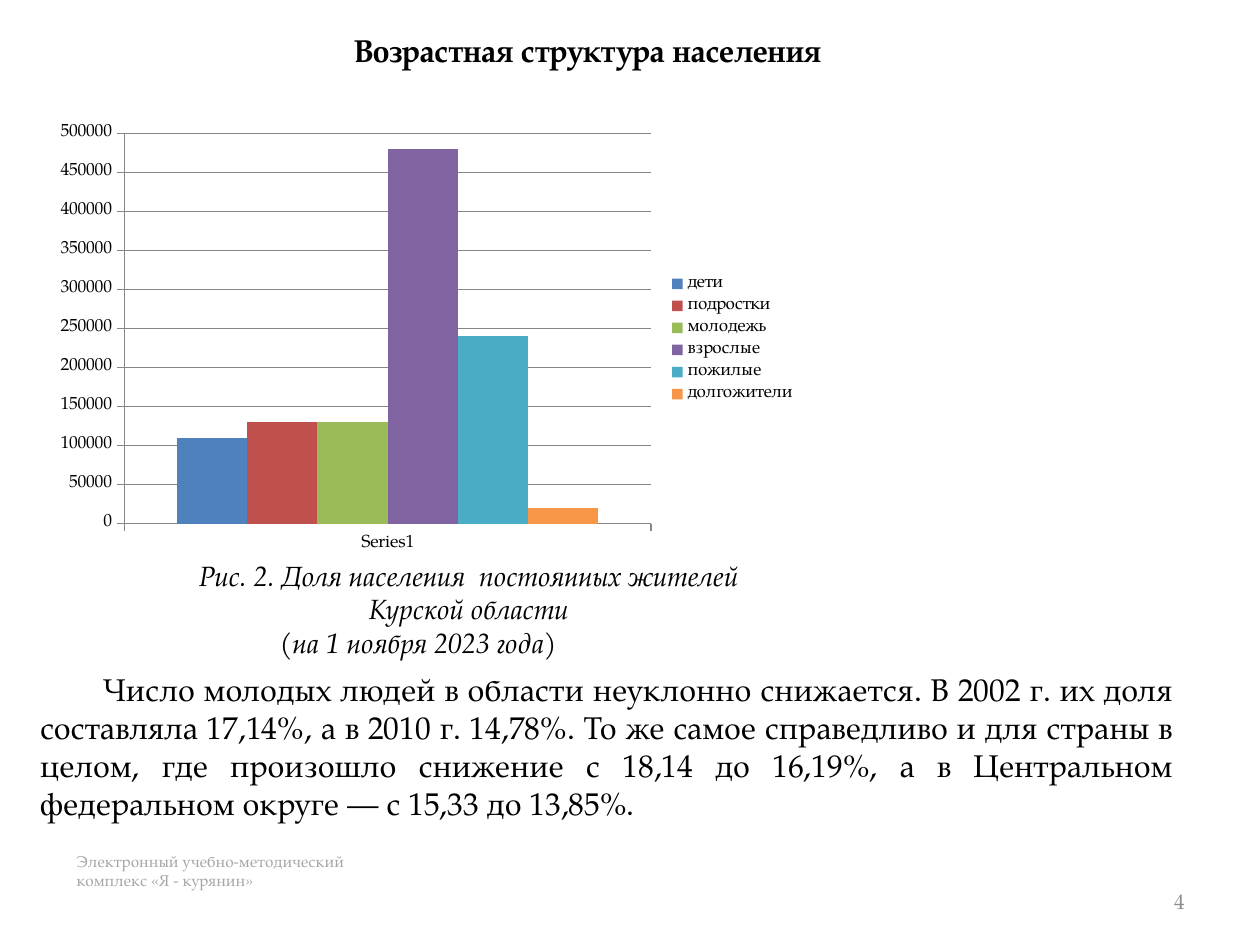
from lxml.etree import SubElement
from pptx import Presentation
from pptx.chart.data import CategoryChartData
from pptx.dml.color import RGBColor
from pptx.enum.chart import XL_CHART_TYPE, XL_LEGEND_POSITION, XL_TICK_MARK
from pptx.enum.text import MSO_ANCHOR, PP_ALIGN
from pptx.oxml.ns import qn
from pptx.util import Inches, Pt

FONT = "TeX Gyre Pagella"
BLACK = RGBColor(0x00, 0x00, 0x00)
SILVER = RGBColor(0xA6, 0xA6, 0xA6)
GRAY = RGBColor(0x8C, 0x8C, 0x8C)
LINE = RGBColor(0x86, 0x86, 0x86)

AGES = [
    ("дети", 110000, RGBColor(0x4F, 0x81, 0xBD)),
    ("подростки", 130000, RGBColor(0xC0, 0x50, 0x4D)),
    ("молодежь", 130000, RGBColor(0x9B, 0xBB, 0x59)),
    ("взрослые", 480000, RGBColor(0x80, 0x64, 0xA2)),
    ("пожилые", 240000, RGBColor(0x4B, 0xAC, 0xC6)),
    ("долгожители", 20000, RGBColor(0xF7, 0x96, 0x46)),
]
CAPTION = ("Рис. 2. Доля населения  постоянных жителей Курской области\n"
           "(на 1 ноября 2023 года)\t")
BODY = ("Число молодых людей в области неуклонно снижается. В 2002 г. их доля "
        "составляла 17,14%, а в 2010 г. 14,78%. То же самое справедливо и для "
        "страны в целом, где произошло снижение с 18,14 до 16,19%, а в "
        "Центральном федеральном округе — с 15,33 до 13,85%.")


def add_text(slide, box, text, size, color=BLACK, align=PP_ALIGN.LEFT,
             bold=False, italic=False, wrap=True):
    """Add a text box in one style and return its text frame."""
    frame = slide.shapes.add_textbox(*map(Inches, box)).text_frame
    frame.word_wrap = wrap
    frame.text = text
    for para in frame.paragraphs:
        para.alignment = align
        for run in para.runs:
            font = run.font
            font.name, font.size = FONT, Pt(size)
            font.bold, font.italic = bold, italic
            font.color.rgb = color
    return frame


def style_axis(axis):
    axis.major_tick_mark = XL_TICK_MARK.OUTSIDE
    axis.minor_tick_mark = XL_TICK_MARK.NONE
    axis.format.line.color.rgb = LINE
    axis.format.line.width = Pt(0.75)


def add_ages(slide, box):
    data = CategoryChartData()
    data.categories = ["Series1"]
    for name, count, _ in AGES:
        data.add_series(name, [count])
    chart = slide.shapes.add_chart(
        XL_CHART_TYPE.COLUMN_CLUSTERED, *map(Inches, box), data).chart
    chart.has_title = False
    chart.font.name, chart.font.size = FONT, Pt(10)
    chart.font.color.rgb = BLACK
    chart.has_legend = True
    chart.legend.position = XL_LEGEND_POSITION.RIGHT
    chart.legend.include_in_layout = False

    style_axis(chart.category_axis)
    scale = chart.value_axis
    style_axis(scale)
    scale.minimum_scale, scale.maximum_scale = 0, 500000
    scale.major_unit = 50000
    scale.has_major_gridlines = True
    grid = scale.major_gridlines.format.line
    grid.color.rgb, grid.width = LINE, Pt(0.75)

    plot = chart.plots[0]
    plot.vary_by_categories = False
    plot.gap_width, plot.overlap = 150, 0
    for series, (_, _, color) in zip(plot.series, AGES):
        series.format.fill.solid()
        series.format.fill.fore_color.rgb = color


def add_caption(slide, box):
    """Add the caption; a tab stop shifts its date line to the left."""
    frame = add_text(slide, box, CAPTION, 16, align=PP_ALIGN.CENTER, italic=True)
    props = frame.paragraphs[1]._p.get_or_add_pPr()
    tabs = SubElement(props, qn("a:tabLst"))
    SubElement(tabs, qn("a:tab"), pos=str(Inches(3)), algn="l")


def add_body(slide, box):
    frame = add_text(slide, box, BODY, 18, align=PP_ALIGN.JUSTIFY)
    props = frame.paragraphs[0]._p.get_or_add_pPr()
    props.set("marL", "0")
    props.set("indent", str(Inches(0.5)))


def add_footer(slide, note, number):
    add_text(slide, note, "Электронный учебно-методический\vкомплекс «Я - курянин»",
             9, SILVER)
    frame = add_text(slide, number, "4", 12, GRAY, PP_ALIGN.RIGHT)
    frame.vertical_anchor = MSO_ANCHOR.MIDDLE


def main():
    deck = Presentation()
    deck.slide_width, deck.slide_height = Inches(10), Inches(7.5)
    slide = deck.slides.add_slide(deck.slide_layouts[6])
    add_footer(slide, (0.51, 6.71, 5, 0.4), (7.17, 6.95, 2.33, 0.4))
    add_text(slide, (2.71, 0.2, 3.98, 0.4), "Возрастная структура населения",
             18, bold=True, wrap=False)
    add_ages(slide, (0.36, 0.92, 6.06, 3.54))
    add_caption(slide, (1.22, 4.38, 5, 0.91))
    add_body(slide, (0.22, 5.27, 9.19, 1.31))
    deck.save("out.pptx")


if __name__ == "__main__":
    main()
